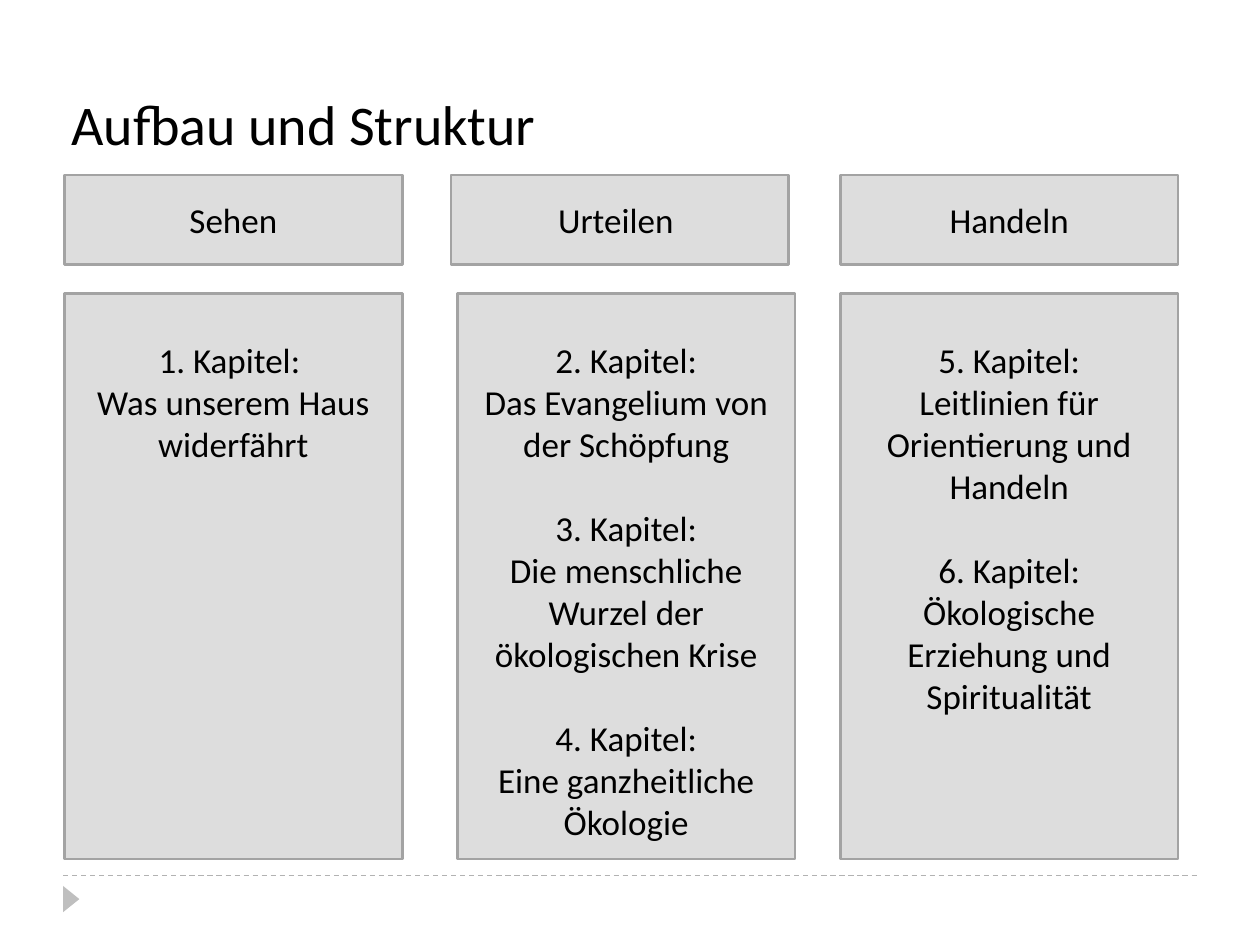
"""Build the slide 'Aufbau und Struktur' with three columns of chapters."""
from pptx import Presentation
from pptx.dml.color import RGBColor
from pptx.enum.dml import MSO_LINE
from pptx.enum.shapes import MSO_CONNECTOR, MSO_SHAPE
from pptx.enum.text import MSO_ANCHOR, PP_ALIGN
from pptx.oxml.ns import qn
from pptx.util import Cm, Pt
from lxml import etree

RECTANGLE = MSO_SHAPE.RECTANGLE
TRIANGLE = MSO_SHAPE.ISOSCELES_TRIANGLE
STRAIGHT = MSO_CONNECTOR.STRAIGHT
DASH = MSO_LINE.DASH
TOP, MIDDLE, BOTTOM = MSO_ANCHOR.TOP, MSO_ANCHOR.MIDDLE, MSO_ANCHOR.BOTTOM
LEFT, CENTER = PP_ALIGN.LEFT, PP_ALIGN.CENTER

BLACK = RGBColor(0x00, 0x00, 0x00)
PANEL = RGBColor(0xDD, 0xDD, 0xDD)
BORDER = RGBColor(0xA3, 0xA3, 0xA3)
RULE = RGBColor(0xB2, 0xB2, 0xB2)
MARKER = RGBColor(0xBF, 0xBF, 0xBF)

COLUMNS = [
    (1.3, 1.3, "Sehen", [("1. Kapitel: ", "Was unserem Haus widerfährt")]),
    (9.09, 9.22, "Urteilen ", [
        ("2. Kapitel:", "Das Evangelium von der Schöpfung"),
        ("3. Kapitel:", "Die menschliche Wurzel der ökologischen Krise"),
        ("4. Kapitel:", "Eine ganzheitliche Ökologie"),
    ]),
    (16.94, 16.94, "Handeln", [
        ("5. Kapitel:", "Leitlinien für Orientierung und Handeln"),
        ("6. Kapitel:", "Ökologische Erziehung und Spiritualität"),
    ]),
]


def write(paragraph, text, size, align):
    paragraph.alignment = align
    run = paragraph.add_run()
    run.text = text
    run.font.name = "Calibri"
    run.font.size = Pt(size)
    run.font.color.rgb = BLACK


def add_panel(left, top, height, anchor):
    panel = slide.shapes.add_shape(RECTANGLE, Cm(left), Cm(top), Cm(6.81), Cm(height))
    panel.shadow.inherit = False
    panel.fill.solid()
    panel.fill.fore_color.rgb = PANEL
    panel.line.color.rgb = BORDER
    panel.line.width = Pt(1.5)
    panel.text_frame.word_wrap = True
    panel.text_frame.vertical_anchor = anchor
    return panel.text_frame


prs = Presentation()
prs.slide_width = Cm(25.4)
prs.slide_height = Cm(19.05)
slide = prs.slides.add_slide(prs.slide_layouts[6])

footer_rule = slide.shapes.add_connector(STRAIGHT, Cm(1.27), Cm(17.65), Cm(24.13), Cm(17.65))
footer_rule.line.color.rgb = RULE
footer_rule.line.width = Pt(0.75)
footer_rule.line.dash_style = DASH
etree.SubElement(footer_rule._element.spPr, qn("a:effectLst"))

footer_marker = slide.shapes.add_shape(TRIANGLE, Cm(1.17), Cm(17.96), Cm(0.53), Cm(0.33))
footer_marker.rotation = 90
footer_marker.shadow.inherit = False
footer_marker.fill.solid()
footer_marker.fill.fore_color.rgb = MARKER
footer_marker.line.fill.background()

title = slide.shapes.add_textbox(Cm(1.19), Cm(1.73), Cm(22.86), Cm(1.55)).text_frame
title.word_wrap = True
title.vertical_anchor = BOTTOM
write(title.paragraphs[0], "Aufbau und Struktur", 32, LEFT)

for step_left, chapters_left, step, chapters in COLUMNS:
    step_panel = add_panel(step_left, 3.53, 1.8, MIDDLE)
    write(step_panel.paragraphs[0], step, 20, CENTER)

    chapter_panel = add_panel(chapters_left, 5.92, 11.4, TOP)
    chapter_panel.margin_top = Cm(0.91)
    for index, (number, heading) in enumerate(chapters):
        if index:
            number_line = chapter_panel.add_paragraph()
            number_line.space_before = Pt(24)
        else:
            number_line = chapter_panel.paragraphs[0]
        write(number_line, number, 20, CENTER)
        write(chapter_panel.add_paragraph(), heading, 20, CENTER)

prs.save("out.pptx")
